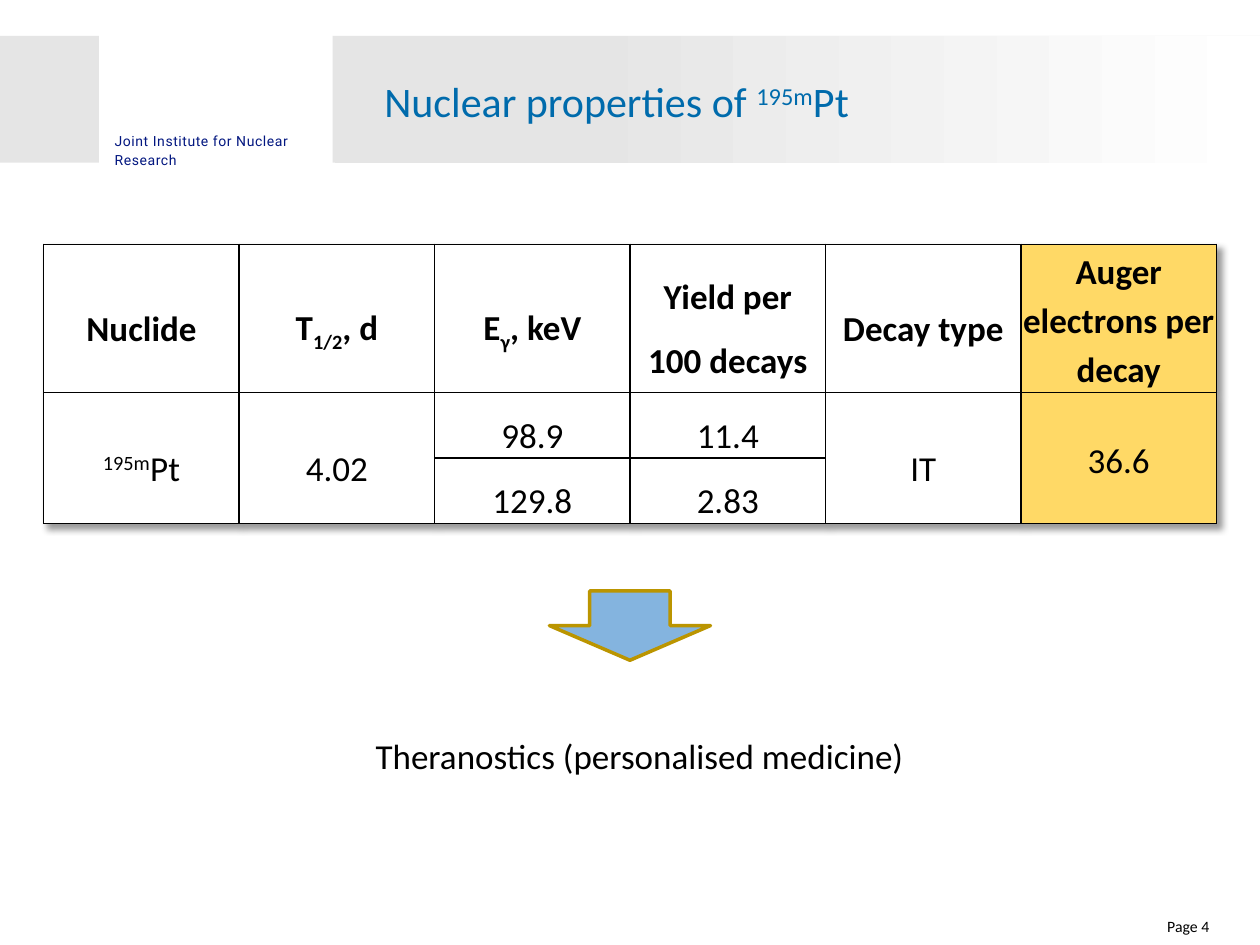
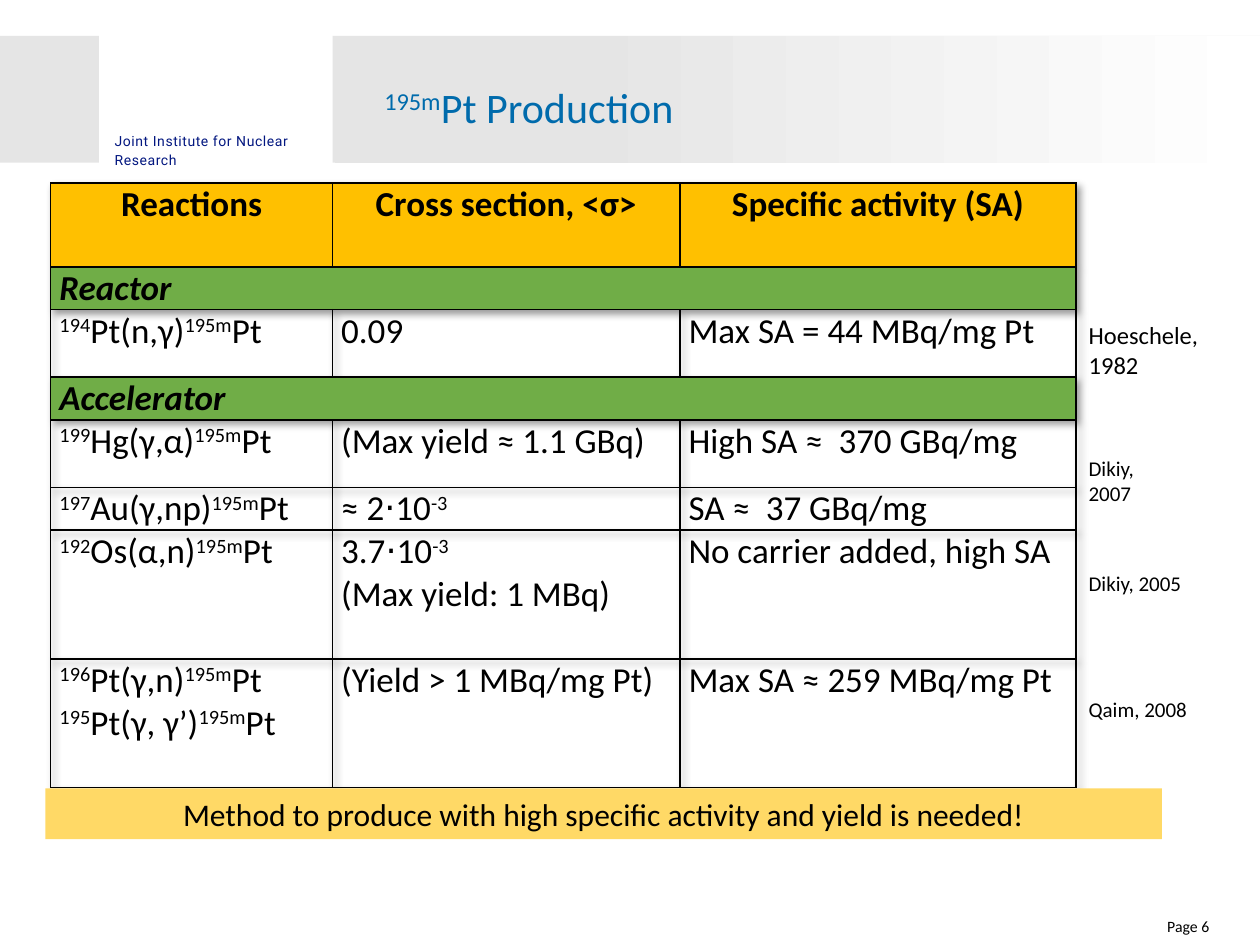
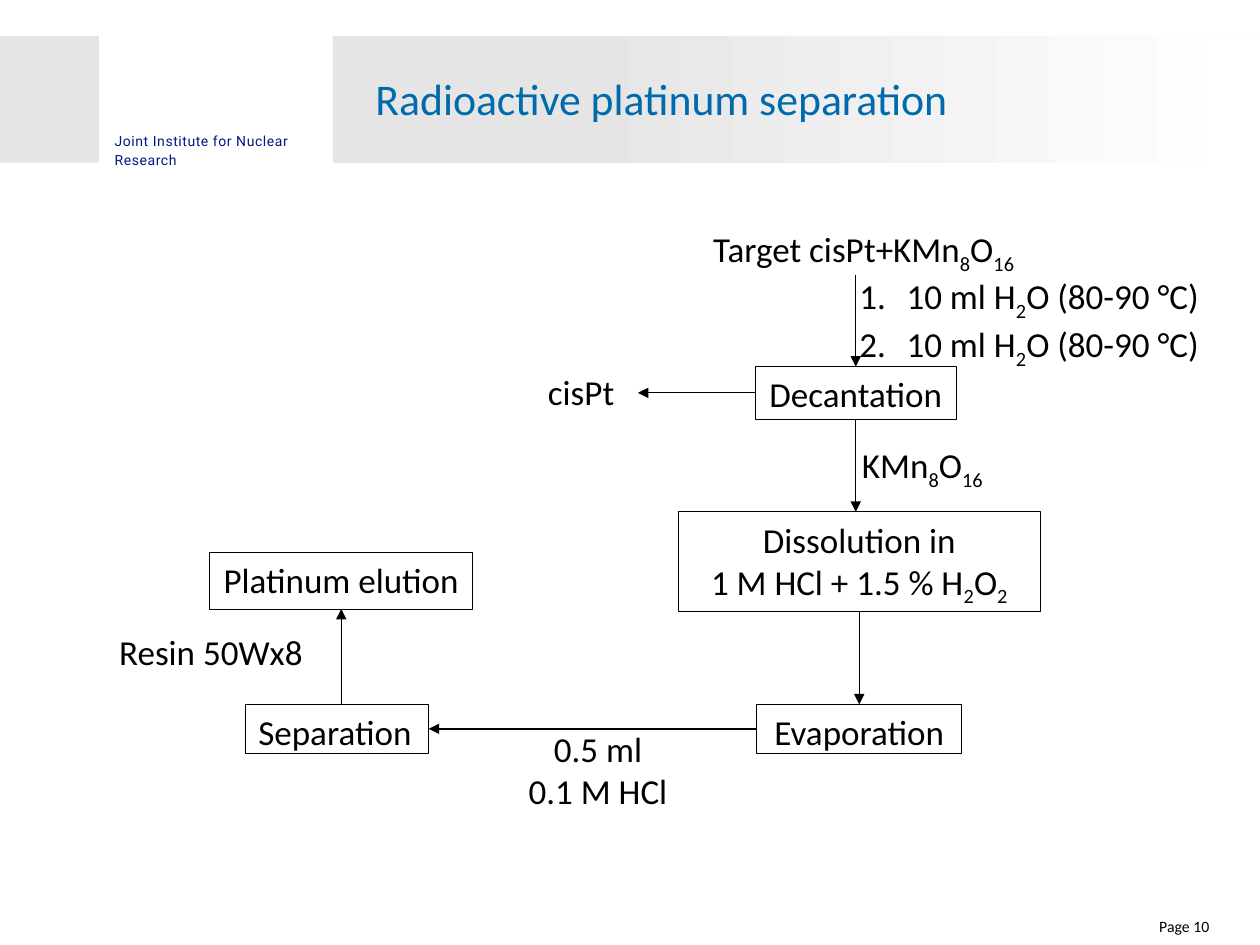
from lxml import etree
from pptx import Presentation
from pptx.dml.color import RGBColor
from pptx.enum.shapes import MSO_CONNECTOR, MSO_SHAPE
from pptx.enum.text import MSO_ANCHOR, PP_ALIGN
from pptx.oxml.ns import qn
from pptx.util import Pt

LEFT, CENTER, RIGHT = PP_ALIGN.LEFT, PP_ALIGN.CENTER, PP_ALIGN.RIGHT
TOP, MIDDLE = MSO_ANCHOR.TOP, MSO_ANCHOR.MIDDLE
RECT, DOWN = MSO_SHAPE.RECTANGLE, MSO_SHAPE.DOWN_ARROW
STRAIGHT = MSO_CONNECTOR.STRAIGHT

BLACK = RGBColor(0x00, 0x00, 0x00)
WHITE = RGBColor(0xFF, 0xFF, 0xFF)
GRAY = RGBColor(0xE5, 0xE5, 0xE5)
NAVY = RGBColor(0x03, 0x17, 0x80)
BLUE = RGBColor(0x00, 0x6B, 0xAC)
SKY = RGBColor(0x5B, 0x9B, 0xD5)
OCHRE = RGBColor(0xBB, 0x95, 0x00)
SAND = RGBColor(0xFF, 0xD9, 0x66)
AMBER = RGBColor(0xFF, 0xC0, 0x00)
GREEN = RGBColor(0x70, 0xAD, 0x47)

BODY, BRAND = "Calibri", "Roboto"
PLAIN_GRID = "{2D5ABB26-0587-4C30-8999-92F81FD0307C}"
INSET = (7.2, 3.6, 7.2, 3.6)
FLUSH = (0, 0, 0, 0)
SHIFT = {"^": "30000", "_": "-25000"}


def sub(parent, tag, **attrs):
    """Append a drawing element to parent."""
    return etree.SubElement(parent, qn("a:" + tag), attrs)


def add_runs(para, text, size, color=BLACK, font=BODY, bold=False,
             italic=False, track=None):
    """Add runs split at "|"; a part led by ^ is raised, by _ lowered."""
    for part in filter(None, text.split("|")):
        run = para.add_run()
        shift = SHIFT.get(part[0])
        run.text = part[1:] if shift else part
        face = run.font
        face.name, face.size = font, Pt(size)
        face.bold, face.italic = bold, italic
        face.color.rgb = color
        props = run._r.get_or_add_rPr()
        if shift:
            props.set("baseline", shift)
        if track:
            props.set("spc", track)


def write(frame, lines, size=20, align=LEFT, space=None, number=False, **look):
    for i, line in enumerate(lines):
        para = frame.paragraphs[0] if i == 0 else frame.add_paragraph()
        para.alignment = align
        if space:
            para.line_spacing = space
        if number:
            props = para._p.get_or_add_pPr()
            props.set("marL", str(Pt(27)))
            props.set("indent", str(Pt(-27)))
            sub(props, "buFont", typeface="+mj-lt")
            sub(props, "buAutoNum", type="arabicPeriod")
        add_runs(para, line, size, **look)


def set_frame(frame, inset=INSET, anchor=TOP):
    frame.word_wrap = True
    frame.vertical_anchor = anchor
    (frame.margin_left, frame.margin_top,
     frame.margin_right, frame.margin_bottom) = map(Pt, inset)


def label(slide, x, y, w, h, *lines, inset=INSET, anchor=TOP, **look):
    frame = slide.shapes.add_textbox(Pt(x), Pt(y), Pt(w), Pt(h)).text_frame
    set_frame(frame, inset, anchor)
    write(frame, lines, **look)


def block(slide, x, y, w, h, *lines, kind=RECT, fill=WHITE, line=None,
          width=0.5, **look):
    shape = slide.shapes.add_shape(kind, Pt(x), Pt(y), Pt(w), Pt(h))
    shape.shadow.inherit = False
    shape.fill.solid()
    shape.fill.fore_color.rgb = fill
    if line is None:
        shape.line.fill.background()
    else:
        shape.line.color.rgb = line
        shape.line.width = Pt(width)
    if lines:
        set_frame(shape.text_frame)
        write(shape.text_frame, lines, **look)
    return shape


def arrow(slide, x1, y1, x2, y2, begin=None, end=None):
    """Draw an arrow; begin and end are (shape, side) joints."""
    link = slide.shapes.add_connector(STRAIGHT, Pt(x1), Pt(y1), Pt(x2), Pt(y2))
    if begin:
        link.begin_connect(*begin)
    if end:
        link.end_connect(*end)
    link.line.color.rgb = BLACK
    link.line.width = Pt(0.75)
    sub(link.line._get_or_add_ln(), "tailEnd", type="triangle")
    sub(link._element.spPr, "effectLst")


def edge(cell, sides):
    props = cell._tc.get_or_add_tcPr()
    for side in "LRTB":
        line = sub(props, "ln" + side, w=str(Pt(1)))
        if side in sides:
            sub(sub(line, "solidFill"), "srgbClr", val=str(BLACK))
        else:
            sub(line, "noFill")


def cast(table):
    """Give a table a soft shadow."""
    effects = etree.Element(qn("a:effectLst"))
    shade = sub(effects, "outerShdw", blurRad=str(Pt(4)), dist=str(Pt(3)),
                dir="2700000", algn="tl", rotWithShape="0")
    sub(sub(shade, "prstClr", val="black"), "alpha", val="40000")
    table._tbl.tblPr.insert(0, effects)


def grid(slide, x, y, cols, rows, texts, style, merges, edges):
    """Build a table; style(row, col) gives fill, inset, anchor and look."""
    table = slide.shapes.add_table(len(rows), len(cols), Pt(x), Pt(y),
                                   Pt(sum(cols)), Pt(sum(rows))).table
    table.first_row = table.horz_banding = False
    table._tbl.tblPr.find(qn("a:tableStyleId")).text = PLAIN_GRID
    cast(table)
    for col, width in zip(table.columns, cols):
        col.width = Pt(width)
    for row, height in zip(table.rows, rows):
        row.height = Pt(height)
    for r1, c1, r2, c2 in merges:
        table.cell(r1, c1).merge(table.cell(r2, c2))
    for r, line in enumerate(texts):
        for c, text in enumerate(line):
            cell = table.cell(r, c)
            fill, inset, anchor, look = style(r, c)
            edge(cell, edges.get((r, c), "LRTB"))
            if fill is None:
                cell.fill.background()
            else:
                cell.fill.solid()
                cell.fill.fore_color.rgb = fill
            (cell.margin_left, cell.margin_top,
             cell.margin_right, cell.margin_bottom) = map(Pt, inset)
            cell.vertical_anchor = anchor
            if text:
                write(cell.text_frame, text.split("\n"), **look)


def page(deck, number, title, x, y, size=24):
    """Add a slide with the shared bands, institute name, title and number."""
    slide = deck.slides.add_slide(deck.slide_layouts[6])
    block(slide, 0, 20.5, 56.5, 72.5, fill=GRAY)
    block(slide, 190, 20.5, 530, 72.5, fill=GRAY)
    label(slide, 65.5, 75, 115, 24, "Joint Institute for Nuclear", "Research",
          inset=FLUSH, size=8, space=1.1, color=NAVY, font=BRAND, track="30")
    fade = block(slide, 191.5, 20.5, 528.5, 72.5).fill
    fade.gradient()
    fade.gradient_angle = 180
    for stop, spot, color in zip(fade.gradient_stops, (0, 0.74), (WHITE, GRAY)):
        stop.position, stop.color.rgb = spot, color
    label(slide, x, y, 479.5, 40.5, title, anchor=MIDDLE, size=size, color=BLUE)
    label(slide, 646, 524, 45, 16, f"Page {number}", inset=FLUSH, size=9,
          align=RIGHT)
    return slide


def decay_style(r, c):
    auger = c == 5
    look = {"align": CENTER, "space": 1.15 if auger else 1.5, "bold": r == 0}
    inset = FLUSH if auger else (5, 0.7, 5, 0)
    return SAND if auger else WHITE, inset, MIDDLE, look


def draw_decay(deck):
    slide = page(deck, 4, "Nuclear properties of |^195m|Pt", 212.5, 37.5)
    label(slide, 127.5, 417.5, 476, 39.5, "Theranostics (personalised medicine)",
          inset=FLUSH, align=CENTER, space=1.1)
    texts = [
        ["Nuclide", "T|_1/2|, d", "E|_γ|, keV", "Yield per 100 decays",
         "Decay type", "Auger electrons per decay"],
        ["|^195m|Pt", "4.02", "98.9", "11.4", "IT", "36.6"],
        ["", "", "129.8", "2.83", "", ""],
    ]
    grid(slide, 25, 139.7, [111.7] * 6, [84.5, 37.5, 37.5], texts, decay_style,
         [(1, c, 2, c) for c in (0, 1, 4, 5)], {})
    down = block(slide, 314, 337.7, 92, 39.6, kind=DOWN, fill=SKY, line=OCHRE,
                 width=2)
    tint = down._element.spPr.find(qn("a:solidFill"))[0]
    sub(tint, "alpha", val="75000")


def yield_style(r, c):
    head, band = r == 0, r in (1, 3)
    fill = AMBER if head else GREEN if band else None
    look = {"align": CENTER if head else LEFT, "bold": head or band,
            "italic": band}
    return fill, (5, 0, 5, 0), TOP, look


def draw_yield(deck):
    slide = page(deck, 6, "|^195m|Pt Production", 212.5, 40.5)
    made = "|^195m|Pt"
    texts = [
        ["Reactions", "Cross section, <σ>", "Specific activity (SA)"],
        ["Reactor", "", ""],
        ["|^194|Pt(n,γ)" + made, "0.09", "Max SA = 44 MBq/mg Pt"],
        ["Accelerator", "", ""],
        ["|^199|Hg(γ,α)" + made, "(Max yield ≈ 1.1 GBq)",
         "High SA ≈  370 GBq/mg"],
        ["|^197|Au(γ,np)" + made, "≈ 2⋅10|^-3", "SA ≈  37 GBq/mg"],
        ["|^192|Os(α,n)" + made, "3.7⋅10|^-3\n(Max yield: 1 MBq)",
         "No carrier added, high SA"],
        ["", "", ""],
        [f"|^196|Pt(γ,n){made}\n|^195|Pt(γ, γ’){made}",
         "(Yield > 1 MBq/mg Pt)", "Max SA ≈ 259 MBq/mg Pt"],
    ]
    grid(slide, 29, 104.5, [161, 198.5, 226.5],
         [48, 24.5, 38.5, 24.5, 38.5, 24.5, 49, 24.5, 73.5], texts, yield_style,
         [(1, 0, 1, 2), (3, 0, 3, 2), (6, 1, 7, 1), (6, 2, 7, 2)],
         {(6, 0): "LRT", (7, 0): "LRB"})
    block(slide, 26, 450.5, 638, 29,
          "Method to produce with high specific activity and yield is needed!",
          fill=SAND, size=18, align=CENTER)
    label(slide, 615, 179.5, 85, 41, "Hoeschele,", "1982", size=14)
    for y, lines in ((256.5, ("Dikiy,", "2007")), (322.5, ("Dikiy, 2005",)),
                     (394.5, ("Qaim, 2008",))):
        label(slide, 615, y, 80, 18 * len(lines), *lines, size=12)


def step(slide, x, y, w, h, *lines, align=CENTER):
    return block(slide, x, y, w, h, *lines, line=BLACK, align=align)


def draw_flow(deck):
    slide = page(deck, 10, "Radioactive platinum separation", 207.5, 36, 25)
    wash = "10 ml H|_2|O (80-90 °С)"
    settle = step(slide, 431.5, 209.5, 115, 30, "Decantation")
    melt = step(slide, 387.5, 292.5, 207, 57, "Dissolution in",
                "1 М HCl + 1.5 % H|_2|O|_2")
    dry = step(slide, 432.5, 402.5, 117, 28, "Evaporation")
    split = step(slide, 140.5, 402.5, 104.5, 28, "Separation", align=LEFT)
    gain = step(slide, 120, 315.5, 150, 32.5, "Platinum elution")

    label(slide, 396.5, 126.5, 194, 35, "Target cisPt+KMn|_8|O|_16",
          align=CENTER)
    label(slide, 484, 153.5, 216, 49, wash, wash, number=True)
    label(slide, 306, 208, 54, 32, "cisPt")
    label(slide, 485.5, 250, 92, 32, "KMn|_8|O|_16")
    label(slide, 293.5, 412, 96.5, 55.5, "0.5 ml", "0.1 M HCl", align=CENTER)
    label(slide, 61, 356.5, 134, 27, "Resin 50Wx8")

    arrow(slide, 489, 157, 489, 209.5, end=(settle, 0))
    arrow(slide, 431.5, 224.5, 364.5, 224.5, begin=(settle, 1))
    arrow(slide, 489, 239.5, 489, 292.5, begin=(settle, 2))
    arrow(slide, 491, 349.5, 491, 402.5, begin=(melt, 2), end=(dry, 0))
    arrow(slide, 432.5, 416.5, 245, 416.5, begin=(dry, 1), end=(split, 3))
    arrow(slide, 195, 402.5, 195, 348, end=(gain, 2))


def main():
    deck = Presentation()
    deck.slide_width, deck.slide_height = Pt(720), Pt(540)
    draw_decay(deck)
    draw_yield(deck)
    draw_flow(deck)
    deck.save("out.pptx")


if __name__ == "__main__":
    main()
